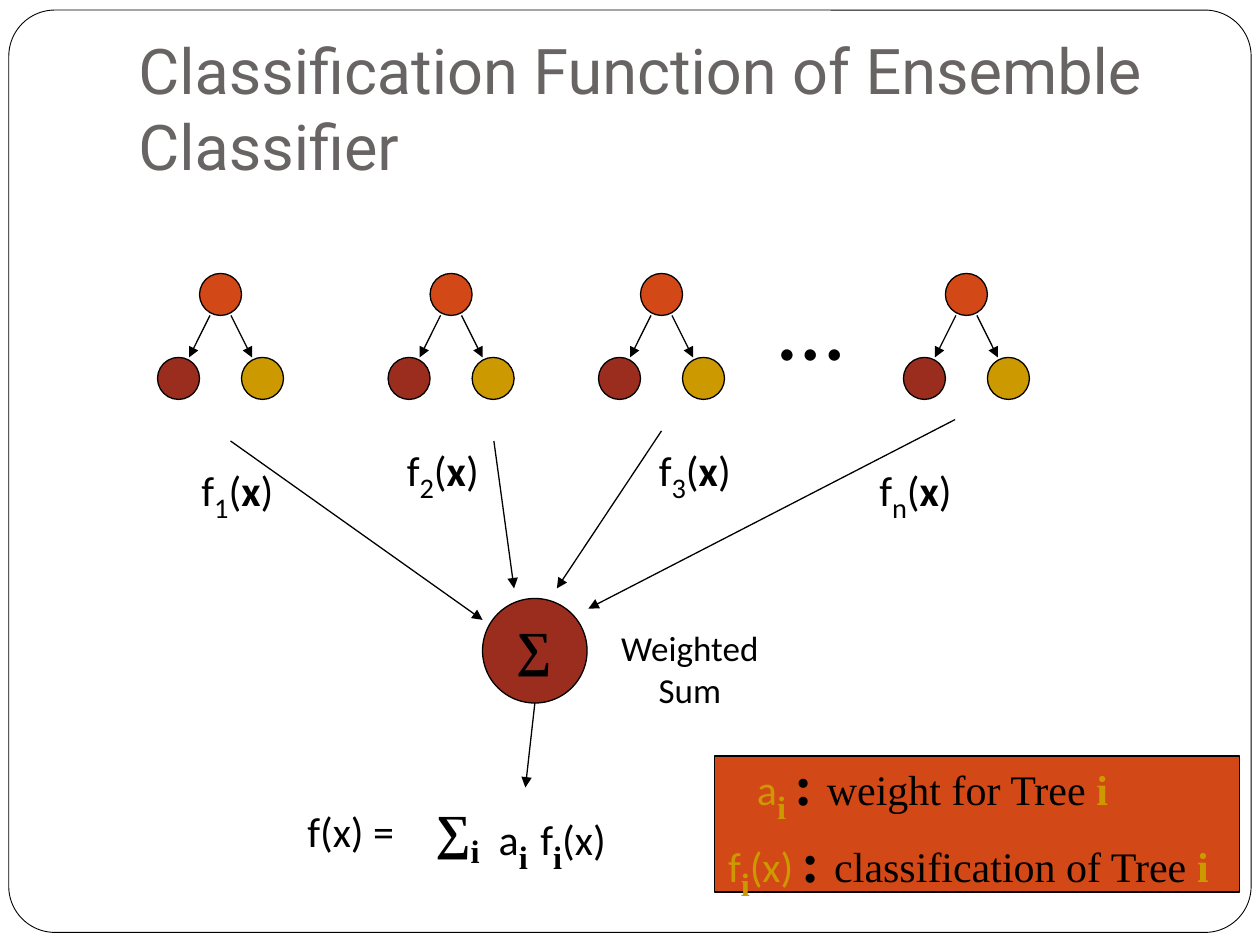
import pptx
import pptx.util
import pptx.dml.color
import pptx.enum.shapes
import pptx.enum.text
import pptx.oxml.ns
from dataclasses import dataclass
from lxml import etree
from pptx.util import Inches


@dataclass(frozen=True)
class Theme:
    white: str = "FFFFFF"
    black: str = "000000"
    gray: str = "696464"
    orange: str = "D34817"
    red: str = "9B2D1F"
    gold: str = "CC9900"
    sans: str = "Calibri"
    serif: str = "Times New Roman"
    heading: str = "Roboto"
    title_size: int = 36
    label_size: int = 20
    body_size: int = 24
    symbol_size: int = 28
    index_size: int = 32
    dots_size: int = 54


@dataclass(frozen=True)
class Style:
    size: int
    font: str = Theme.sans
    color: str = Theme.black
    bold: bool = False
    subscript: bool = False


THEME = Theme()
BODY = Style(THEME.body_size)
BODY_BOLD = Style(THEME.body_size, bold=True)
BODY_GOLD = Style(THEME.body_size, color=THEME.gold)
NUMBER = Style(THEME.symbol_size, subscript=True)
INDEX = Style(THEME.index_size, THEME.serif, bold=True, subscript=True)
INDEX_GOLD = Style(THEME.index_size, THEME.serif, THEME.gold, True, True)
SIGMA = Style(THEME.symbol_size, THEME.serif, bold=True)
COLON = Style(THEME.index_size, THEME.serif, bold=True)
MEANING = Style(THEME.body_size, THEME.serif)
TREE_INDEX = Style(THEME.body_size, THEME.serif, THEME.gold, True)


def rgb(color):
    return pptx.dml.color.RGBColor.from_string(color)


def add_shape(slide, kind, box, fill, line_width=0.75):
    preset = getattr(pptx.enum.shapes.MSO_SHAPE, kind)
    shape = slide.shapes.add_shape(preset, *map(Inches, box))
    shape.shadow.inherit = False
    shape.fill.solid()
    shape.fill.fore_color.rgb = rgb(fill)
    shape.line.color.rgb = rgb(THEME.black)
    shape.line.width = pptx.util.Pt(line_width)
    return shape


def add_arrow(slide, start, end):
    arrow = slide.shapes.add_connector(
        pptx.enum.shapes.MSO_CONNECTOR.STRAIGHT, *map(Inches, (*start, *end)))
    arrow.line.color.rgb = rgb(THEME.black)
    arrow.line.width = pptx.util.Pt(0.75)
    qn = pptx.oxml.ns.qn
    etree.SubElement(arrow.line._get_or_add_ln(), qn("a:tailEnd"), type="triangle")
    etree.SubElement(arrow._element.spPr, qn("a:effectLst"))


def add_text(slide, box, *lines, wrap=False):
    text_frame = slide.shapes.add_textbox(*map(Inches, box)).text_frame
    text_frame.word_wrap = wrap
    for number, pieces in enumerate(lines):
        paragraph = text_frame.add_paragraph() if number else text_frame.paragraphs[0]
        for text, style in pieces:
            run = paragraph.add_run()
            run.text = text
            run.font.name = style.font
            run.font.size = pptx.util.Pt(style.size)
            run.font.bold = style.bold
            run.font.color.rgb = rgb(style.color)
            if style.subscript:
                run.font._element.set("baseline", "-25000")
    return text_frame


def add_title(slide, box):
    style = Style(THEME.title_size, THEME.heading, THEME.gray)
    title = add_text(
        slide, box, [("Classification Function of Ensemble Classifier", style)], wrap=True)
    title.vertical_anchor = pptx.enum.text.MSO_ANCHOR.BOTTOM
    title.margin_bottom = Inches(0.1)


def add_tree(slide, box):
    left, top, width, height = box
    node = width / 3
    middle = left + width / 2
    bottom = top + height - node
    add_shape(slide, "OVAL", (left + node, top, node, node), THEME.orange)
    for side, color in ((1, THEME.gold), (-1, THEME.red)):
        leaf_left = middle + side * node - node / 2
        add_shape(slide, "OVAL", (leaf_left, bottom, node, node), color)
        add_arrow(slide, (middle + side * node / 4, top + node),
                  (middle + side * node * 0.75, bottom))


def add_forest(slide, box):
    left, top, width, height = box
    tree_width = 1
    for offset in (0, 1.83, 3.5, width - tree_width):
        add_tree(slide, (left + offset, top, tree_width, height))
    add_text(slide, (left + 4.83, top - 0.11, 0.81, 1), [("…", Style(THEME.dots_size))])


def add_votes(slide, box):
    left, top, width, height = box
    votes = (
        ("1", (0, 0.25), (0.33, 0.17), (2.33, 1.59)),
        ("2", (1.63, 0.09), (2.42, 0.17), (2.58, 1.34)),
        ("3", (3.63, 0.09), (3.75, 0.09), (2.92, 1.34)),
        ("n", (5.38, 0.25), (6.08, 0), (3.17, height)),
    )
    for name, label, start, end in votes:
        add_arrow(slide, (left + start[0], top + start[1]), (left + end[0], top + end[1]))
        add_text(slide, (left + label[0], top + label[1], 0.91, 0.5),
                 [("f", BODY), (name, NUMBER), ("(", BODY), ("x", BODY_BOLD), (")", BODY)])


def add_weighted_sum(slide, box):
    left, top, width, height = box
    add_shape(slide, "OVAL", (left, top, height, height), THEME.red)
    add_text(slide, (left + 0.17, top + 0.1, 0.48, 0.57), [("∑", SIGMA)])
    label = Style(THEME.label_size)
    caption = add_text(slide, (left + 0.92, top + 0.17, width - 0.92, 0.77),
                       [("Weighted", label)], [("Sum", label)])
    for paragraph in caption.paragraphs:
        paragraph.alignment = pptx.enum.text.PP_ALIGN.CENTER
    add_arrow(slide, (left + height / 2, top + height), (left + 0.34, top + 1.5))


def add_formula(slide, box):
    left, top, width, height = box
    add_text(slide, (left, top + 0.09, 1.18, 0.5), [("f(x) =", BODY)])
    add_text(slide, (left + 1.02, top, 0.56, height), [("∑", SIGMA), ("i", INDEX)])
    add_text(slide, (left + 1.52, top + 0.05, 0.46, 0.5), [("a", BODY), ("i", INDEX)])
    add_text(slide, (left + 1.85, top + 0.05, width - 1.85, 0.5),
             [("f", BODY), ("i", INDEX), ("(x)", BODY)])


def add_legend(slide, box):
    left, top, width, height = box
    add_shape(slide, "RECTANGLE", box, THEME.orange)
    legend = add_text(
        slide, (left + 0.01, top - 0.1, width - 0.04, 1.43),
        [("a", BODY_GOLD), ("i ", INDEX_GOLD), (": ", COLON),
         ("weight for Tree ", MEANING), ("i", TREE_INDEX)],
        [("f", BODY_GOLD), ("i", INDEX_GOLD), ("(x)", BODY_GOLD), (" ", INDEX),
         (": ", COLON), ("classification of Tree ", MEANING), ("i", TREE_INDEX)])
    properties = legend.paragraphs[0]._p.get_or_add_pPr()
    properties.set("marL", str(Inches(0.23)))


def main():
    presentation = pptx.Presentation()
    presentation.slide_width = Inches(10)
    presentation.slide_height = Inches(7.5)
    slide = presentation.slides.add_slide(presentation.slide_layouts[6])
    frame = add_shape(slide, "ROUNDED_RECTANGLE", (0.07, 0.08, 9.86, 7.32), THEME.white, 0.5)
    frame.adjustments[0] = 0.05
    add_title(slide, (1, 0.3, 8.5, 1.25))
    add_forest(slide, (1.25, 2.17, 6.92, 1))
    add_votes(slide, (1.5, 3.33, 6.29, 1.5))
    add_weighted_sum(slide, (3.83, 4.75, 2.37, 0.83))
    add_formula(slide, (2.34, 6.25, 2.66, 0.63))
    add_legend(slide, (5.67, 6, 4.17, 1.08))
    presentation.save("out.pptx")


if __name__ == "__main__":
    main()
